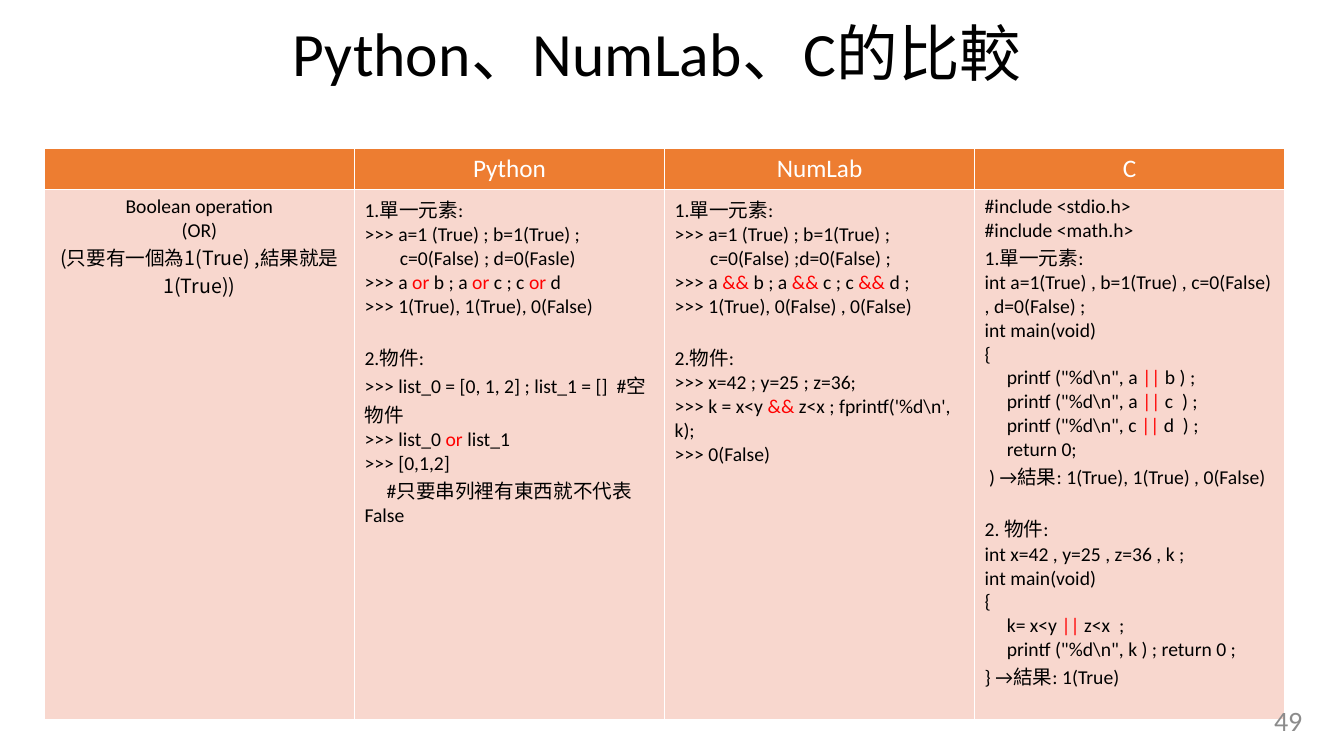
from lxml import etree
from pptx import Presentation
from pptx.dml.color import RGBColor
from pptx.enum.text import MSO_ANCHOR, MSO_AUTO_SIZE, PP_ALIGN
from pptx.oxml.ns import qn
from pptx.util import Emu, Pt

LEFT, CENTER, RIGHT = PP_ALIGN.LEFT, PP_ALIGN.CENTER, PP_ALIGN.RIGHT
MIDDLE = MSO_ANCHOR.MIDDLE
NO_FIT = MSO_AUTO_SIZE.NONE
TITLE_ONLY = 5
GRID_COLUMNS, GRID_ROWS = 40, 30

TOPIC = ["Boolean operation", "(OR)"]
TOPIC_NOTE = "(只要有一個為1(True) ,結果就是1(True))"

PYTHON = """1.單一元素:
>>> a=1 (True) ; b=1(True) ;
        c=0(False) ; d=0(Fasle)
>>> a or b ; a or c ; c or d
>>> 1(True), 1(True), 0(False)
2.物件:
>>> list_0 = [0, 1, 2] ; list_1 = []  #空物件
>>> list_0 or list_1
>>> [0,1,2]
     #只要串列裡有東西就不代表False"""

NUMLAB = r"""1.單一元素:
>>> a=1 (True) ; b=1(True) ;
        c=0(False) ;d=0(False) ;
>>> a && b ; a && c ; c && d ;
>>> 1(True), 0(False) , 0(False)
2.物件:
>>> x=42 ; y=25 ; z=36;
>>> k = x<y && z<x ; fprintf('%d\n', k);
>>> 0(False)"""

C = r"""#include <stdio.h>
#include <math.h>
1.單一元素:
int a=1(True) , b=1(True) , c=0(False) , d=0(False) ;
int main(void)
{
     printf ("%d\n", a || b ) ;
     printf ("%d\n", a || c  ) ;
     printf ("%d\n", c || d  ) ;
     return 0;
 ) →結果: 1(True), 1(True) , 0(False)
2. 物件:
int x=42 , y=25 , z=36 , k ;
int main(void)
{
     k= x<y || z<x  ;
     printf ("%d\n", k ) ; return 0 ;
} →結果: 1(True)"""

LANGUAGES = [("Python", "or", PYTHON), ("NumLab", "&&", NUMLAB), ("C", "||", C)]


def color(value):
    return RGBColor.from_string(value)


class SlideBuilder:
    latin, east = "Calibri", "Noto Sans CJK SC"
    ink, accent, white, gray = "000000", "FF0000", "FFFFFF", "8C8C8C"
    header, body = "ED7D31", "F8D7CE"
    title_size, number_size, header_size, body_size = 44, 20, 18, 14
    section_gap, space_width = 17, 3.16

    def __init__(self, deck):
        self.column = deck.slide_width / GRID_COLUMNS
        self.row = deck.slide_height / GRID_ROWS
        self.slide = deck.slides.add_slide(deck.slide_layouts[TITLE_ONLY])

    def area(self, left, top, width, height):
        return (Emu(round(left * self.column)), Emu(round(top * self.row)),
                Emu(round(width * self.column)), Emu(round(height * self.row)))

    def span(self, para, text, size, ink, latin=None):
        span = para.add_run()
        span.text = text
        span.font.size = Pt(size)
        span.font.name = latin or self.latin
        span.font.color.rgb = color(ink)
        etree.SubElement(span.font._element, qn("a:ea"), typeface=self.east)

    def para(self, frame, align):
        para = frame.paragraphs[0]
        if para.runs:
            para = frame.add_paragraph()
        para.alignment = align
        return para

    def title(self, parts, area):
        box = self.slide.shapes.title
        box.left, box.top, box.width, box.height = self.area(*area)
        frame = box.text_frame
        frame.auto_size, frame.vertical_anchor = NO_FIT, MIDDLE
        para = self.para(frame, CENTER)
        para.line_spacing = 0.9
        for part in parts:
            self.span(para, part, self.title_size, self.ink)

    def page_number(self, text, area):
        box = self.slide.shapes.add_textbox(*self.area(*area))
        frame = box.text_frame
        frame.word_wrap, frame.vertical_anchor = True, MIDDLE
        self.span(self.para(frame, RIGHT), text, self.number_size, self.gray)

    def table(self, left, top, column_width, row_heights, columns):
        area = self.area(left, top, column_width * columns, sum(row_heights))
        table = self.slide.shapes.add_table(len(row_heights), columns, *area).table
        table.first_row = table.horz_banding = False
        for column in table.columns:
            column.width = Emu(round(column_width * self.column))
        for row, height in zip(table.rows, row_heights):
            row.height = Emu(round(height * self.row))
        for index in range(columns):
            self.paint(table.cell(0, index), self.header)
            self.paint(table.cell(1, index), self.body)
        return table

    def paint(self, cell, fill):
        cell.fill.solid()
        cell.fill.fore_color.rgb = color(fill)
        properties = cell._tc.get_or_add_tcPr()
        for index, side in enumerate("LRTB"):
            border = etree.Element(qn(f"a:ln{side}"), w=str(Pt(1)))
            solid = etree.SubElement(border, qn("a:solidFill"))
            etree.SubElement(solid, qn("a:srgbClr"), val=self.white)
            properties.insert(index, border)

    def heading(self, cell, text):
        self.span(self.para(cell.text_frame, CENTER), text, self.header_size, self.white)

    def topic(self, cell, lines, note):
        for line in lines:
            self.span(self.para(cell.text_frame, CENTER), line, self.body_size, self.ink)
        self.span(self.para(cell.text_frame, CENTER), note, self.body_size, self.ink, self.east)

    def code(self, cell, text, operator):
        for line in text.splitlines():
            para = self.para(cell.text_frame, LEFT)
            content = line.lstrip()
            indent = (len(line) - len(content)) * self.space_width
            if indent:
                para._p.get_or_add_pPr().set("indent", str(Pt(indent)))
            if content.startswith("2."):
                para.space_before = Pt(self.section_gap)
            for index, part in enumerate(content.split(operator)):
                if index:
                    self.span(para, operator, self.body_size, self.accent)
                self.span(para, part, self.body_size, self.ink)


def main():
    deck = Presentation()
    deck.slide_width, deck.slide_height = Emu(12192000), Emu(6858000)
    page = SlideBuilder(deck)
    table = page.table(1.32, 5.88, 9.23, [1.64, 21.04], len(LANGUAGES) + 1)
    page.topic(table.cell(1, 0), TOPIC, TOPIC_NOTE)
    for index, (name, operator, text) in enumerate(LANGUAGES, 1):
        page.heading(table.cell(0, index), name)
        page.code(table.cell(1, index), text, operator)
    page.page_number("49", (30.06, 27.8, 9, 1.6))
    page.title(["Python", "、", "NumLab、C", "的比較"], (4.56, 0.6, 30, 3.32))
    deck.save("out.pptx")


if __name__ == "__main__":
    main()
